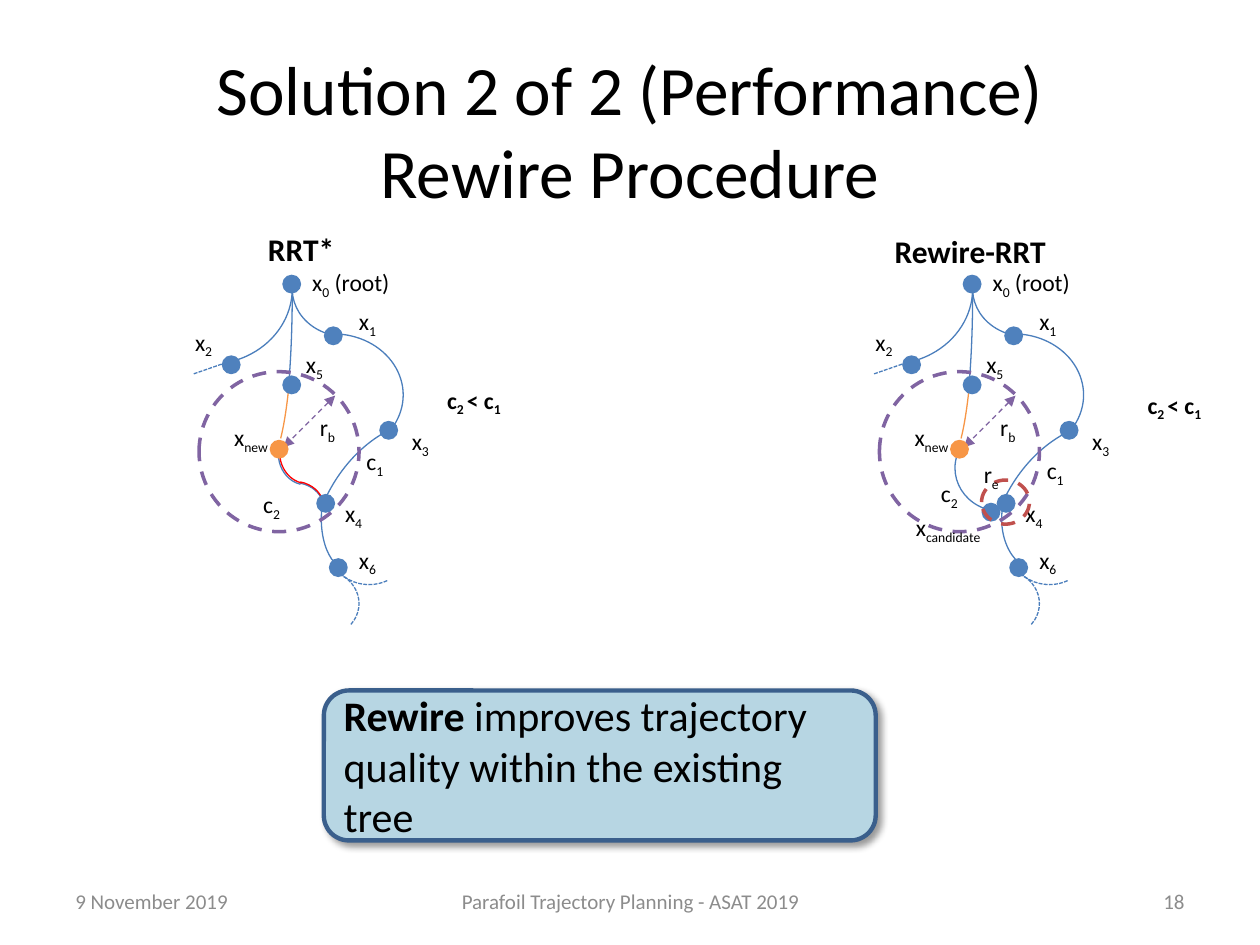
import pptx
import pptx.dml.color
import pptx.enum.dml
import pptx.enum.shapes
import pptx.enum.text
import pptx.oxml.ns
import pptx.util
from lxml import etree
from pptx.util import Inches

COLORS = {"black": "000000", "node": "4F81BD", "edge": "4B7EBC", "new": "F79646",
          "reach": "8064A2", "ring": "C0504D", "rewired": "FF0000",
          "panel": "B7D6E3", "border": "3A5F8C", "footer": "8C8C8C"}
SHAPE = pptx.enum.shapes.MSO_SHAPE
ALIGN = pptx.enum.text.PP_ALIGN
ANCHOR = pptx.enum.text.MSO_ANCHOR
FIT = pptx.enum.text.MSO_AUTO_SIZE
DASH = pptx.enum.dml.MSO_LINE.DASH
SHORT_DASH = pptx.enum.dml.MSO_LINE.SQUARE_DOT
NODE_SIZE = 0.15
TREE_STEP = 5.4

TREE_ARCS = [  # left, top, width, height, start, end
    (1.01, 1.69, 1.31, 1.2, 1.07, 41.74),
    (2.32, 1.92, 0.84, 0.75, 68.4, 106.62),
    (2.09, 2.65, 1.11, 0.97, 162, 20.27),
    (1.91, 0.92, 0.41, 2.83, 0.63, 44.72),
]
TREE_NODES = [(2.24, 2.18), (1.76, 2.82), (2.57, 2.59), (3.01, 3.34),
              (2.61, 4.43), (2.24, 2.98), (2.51, 3.92)]
TREE_LABELS = [
    (2.44, 3.23, 0.47, "r|b"), (2.38, 2.08, 0.93, "x|0| (root)"),
    (2.75, 2.39, 0.93, "x|1"), (1.45, 2.55, 0.44, "x|2"),
    (3.17, 3.34, 0.44, "x|3"), (2.64, 3.91, 0.44, "x|4"),
    (2.33, 2.73, 0.44, "x|5"), (2.75, 4.28, 0.44, "x|6"),
    (1.76, 3.31, 0.55, "x|new"),
]


class Page:
    def __init__(self, slide, font="Calibri"):
        self.slide = slide
        self.font = font

    def color(self, name):
        return pptx.dml.color.RGBColor.from_string(COLORS[name])

    def style_text(self, para, size, color="black", bold=False, align=ALIGN.LEFT):
        para.alignment = align
        para.font.name = self.font
        para.font.size = pptx.util.Pt(size)
        para.font.bold = bold
        para.font.color.rgb = self.color(color)

    def style_line(self, line, color, width, dash=None):
        line.color.rgb = self.color(color)
        line.width = pptx.util.Pt(width)
        if dash is not None:
            line.dash_style = dash

    def title(self, text, left, top, width, height):
        box = self.slide.shapes.title
        box.left, box.top = Inches(left), Inches(top)
        box.width, box.height = Inches(width), Inches(height)
        frame = box.text_frame
        frame.text = text
        frame.auto_size = FIT.NONE
        frame.vertical_anchor = ANCHOR.MIDDLE
        self.style_text(frame.paragraphs[0], 39.6, align=ALIGN.CENTER)

    def text(self, left, top, width, height, text, size, anchor=ANCHOR.TOP, **style):
        """Add a text box; every second part between bars is a subscript."""
        box = self.slide.shapes.add_textbox(
            Inches(left), Inches(top), Inches(width), Inches(height))
        frame = box.text_frame
        frame.word_wrap = True
        frame.vertical_anchor = anchor
        if anchor == ANCHOR.TOP:
            frame.auto_size = FIT.SHAPE_TO_FIT_TEXT
        para = frame.paragraphs[0]
        for index, part in enumerate(text.split("|")):
            span = para.add_run()
            span.text = part
            if index % 2:
                span.font._element.set("baseline", "-25000")
        self.style_text(para, size, **style)

    def label(self, left, top, width, text, bold=False):
        self.text(left, top, width, 0.33, text, 13.5, bold=bold)

    def shape(self, kind, left, top, width, height, fill=None):
        shape = self.slide.shapes.add_shape(
            kind, Inches(left), Inches(top), Inches(width), Inches(height))
        shape.shadow.inherit = False
        if fill:
            shape.fill.solid()
            shape.fill.fore_color.rgb = self.color(fill)
        else:
            shape.fill.background()
        return shape

    def node(self, left, top, fill="node"):
        node = self.shape(SHAPE.OVAL, left, top, NODE_SIZE, NODE_SIZE, fill)
        node.line.fill.background()

    def circle(self, left, top, width, height, color):
        circle = self.shape(SHAPE.OVAL, left, top, width, height)
        self.style_line(circle.line, color, 2, DASH)

    def arc(self, left, top, width, height, start, end, color="edge", dash=None, flip=False):
        arc = self.shape(SHAPE.ARC, left, top, width, height)
        arc.adjustments[0], arc.adjustments[1] = start, end
        if flip:
            arc._element.spPr.xfrm.set("flipV", "1")
        self.style_line(arc.line, color, 0.75, dash)

    def line(self, x1, y1, x2, y2, color, dash, arrows=False):
        line = self.slide.shapes.add_connector(
            pptx.enum.shapes.MSO_CONNECTOR.STRAIGHT,
            Inches(x1), Inches(y1), Inches(x2), Inches(y2))
        self.style_line(line.line, color, 0.75, dash)
        properties = line._element.spPr
        if arrows:
            for end in ("a:headEnd", "a:tailEnd"):
                etree.SubElement(properties.ln, pptx.oxml.ns.qn(end), type="triangle")
        etree.SubElement(properties, pptx.oxml.ns.qn("a:effectLst"))

    def callout(self, left, top, width, height, lead, rest):
        box = self.shape(SHAPE.ROUNDED_RECTANGLE, left, top, width, height, "panel")
        self.style_line(box.line, "border", 2.5)
        name = pptx.oxml.ns.qn
        effects = box._element.spPr.find(name("a:effectLst"))
        shadow = etree.SubElement(effects, name("a:outerShdw"), blurRad="50800",
                                  dist="38100", dir="2700000", algn="tl", rotWithShape="0")
        tint = etree.SubElement(shadow, name("a:srgbClr"), val=COLORS["black"])
        etree.SubElement(tint, name("a:alpha"), val="40000")
        frame = box.text_frame
        frame.word_wrap = True
        frame.vertical_anchor = ANCHOR.MIDDLE
        para = frame.paragraphs[0]
        for text, bold in ((lead, True), (rest, False)):
            span = para.add_run()
            span.text = text
            span.font.bold = bold
        self.style_text(para, 24)

    def tree(self, dx):
        """Draw what both search trees share, moved right by dx."""
        for left, *rest in TREE_ARCS:
            self.arc(left + dx, *rest)
        self.line(1.76 + dx, 2.89, 1.53 + dx, 2.97, "edge", SHORT_DASH)
        self.arc(2.61 + dx, 4.05, 0.64, 0.59, 36.8, 81.1, dash=SHORT_DASH)
        self.arc(2.29 + dx, 4.53, 0.56, 0.52, 193.46, 41.99, dash=SHORT_DASH, flip=True)
        self.circle(1.58 + dx, 2.95, 1.27, 1.27, "reach")
        self.line(2.66 + dx, 3.14, 2.25 + dx, 3.55, "reach", DASH, arrows=True)
        self.arc(1.92 + dx, 0.84, 0.41, 2.83, 46.88, 51.13, "new")
        for left, top in TREE_NODES:
            self.node(left + dx, top)
        self.node(2.14 + dx, 3.49, "new")
        for left, *rest in TREE_LABELS:
            self.label(left + dx, *rest)


def main():
    deck = pptx.Presentation()
    deck.slide_width, deck.slide_height = Inches(10), Inches(7.5)
    page = Page(deck.slides.add_slide(deck.slide_layouts[5]))
    page.title("Solution 2 of 2 (Performance)\vRewire Procedure", 0.69, 0.48, 8.62, 1.09)

    # RRT*: the new node is joined straight to x4
    page.text(1.39, 1.78, 2, 0.4, "RRT*", 18, bold=True, align=ALIGN.CENTER)
    page.arc(2.44, 3.31, 2.13, 2.59, 129.76, 150.48)
    page.arc(2.55, 3.72, 0.42, 0.8, 63.63, 128.44)
    for color, left, top, bend_left, bend_top in (("edge", 2.21, 3.36, 2.09, 3.83),
                                                  ("rewired", 2.22, 3.35, 2.09, 3.82)):
        page.arc(left, top, 0.45, 0.49, 61.07, 117.78, color)
        page.arc(bend_left, bend_top, 0.48, 0.41, 170.93, 2.87, color)
    page.tree(0)
    page.label(1.99, 3.84, 0.44, "c|2")
    page.label(2.81, 3.5, 0.44, "c|1")
    page.label(3.45, 3.01, 0.77, "c|2 |< c|1", bold=True)

    # Rewire-RRT: the new node reaches a candidate close to x4
    page.text(6.7, 1.79, 2, 0.4, "Rewire-RRT", 18, bold=True, align=ALIGN.CENTER)
    page.arc(7.82, 3.33, 2.12, 2.59, 130.38, 150.48)
    page.arc(7.95, 3.72, 0.55, 0.8, 63.63, 130.09)
    page.arc(7.58, 3.37, 0.74, 0.69, 67.27, 117.78)
    page.tree(TREE_STEP)
    page.node(7.79, 3.99)
    page.circle(7.79, 3.81, 0.38, 0.35, "ring")
    page.label(7.71, 3.6, 0.5, "r|e")
    page.label(7.37, 3.75, 0.44, "c|2")
    page.label(8.21, 3.57, 0.44, "c|1")
    page.label(7.17, 4.02, 0.81, "x|candidate")
    page.label(9.01, 3.05, 0.77, "c|2 |< c|1", bold=True)

    page.callout(2.57, 5.48, 4.38, 1.19, "Rewire ",
                 "improves trajectory quality within the existing tree")
    for left, width, text, align in (
            (0.5, 2.33, "9 November 2019", ALIGN.LEFT),
            (3.42, 3.17, "Parafoil Trajectory Planning - ASAT 2019", ALIGN.CENTER),
            (7.17, 2.33, "18", ALIGN.RIGHT)):
        page.text(left, 6.95, width, 0.4, text, 12, ANCHOR.MIDDLE, color="footer", align=align)
    deck.save("out.pptx")


if __name__ == "__main__":
    main()
